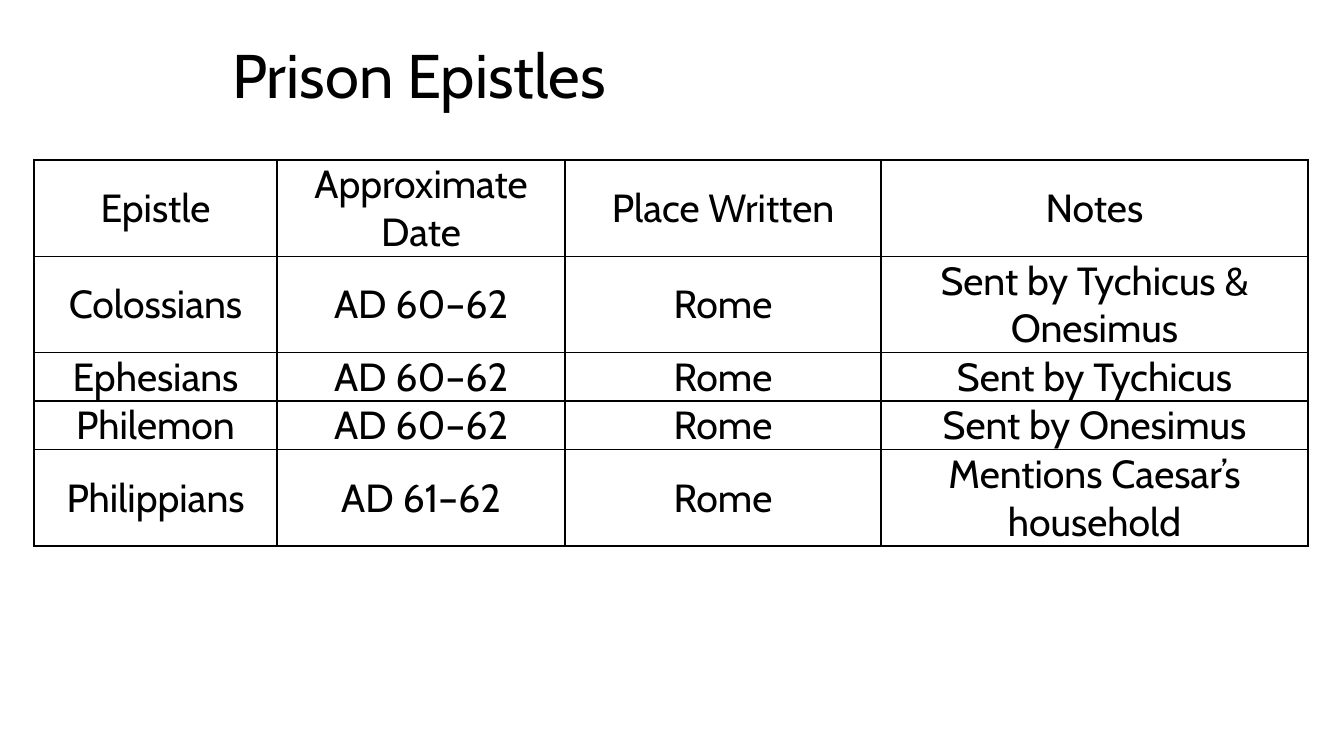
from lxml.etree import SubElement
from pptx import Presentation
from pptx.dml.color import RGBColor
from pptx.enum.text import MSO_ANCHOR, PP_ALIGN
from pptx.oxml.ns import qn
from pptx.util import Emu, Pt

COLORS = {"ink": "000000", "paper": "FFFFFF"}
PX = 914400 / 100.8

COLUMN_WIDTHS = [243, 288, 316, 427]
LINE_HEIGHT = 48
LINES_PER_ROW = [2, 2, 1, 1, 2]
EPISTLES = [
    ["Epistle", "Approximate Date", "Place Written", "Notes"],
    ["Colossians", "AD 60–62", "Rome", "Sent by Tychicus & Onesimus"],
    ["Ephesians", "AD 60–62", "Rome", "Sent by Tychicus"],
    ["Philemon", "AD 60–62", "Rome", "Sent by Onesimus"],
    ["Philippians", "AD 61–62", "Rome", "Mentions Caesar’s household"],
]


def px(length):
    return Emu(round(length * PX))


class SlideBuilder:
    font_name = "Cabin"
    title_size = 44
    table_size = 28
    inner_border = 1
    outer_border = 1.5

    def __init__(self, presentation):
        self.slide = presentation.slides.add_slide(presentation.slide_layouts[5])
        background = self.slide.background.fill
        background.solid()
        background.fore_color.rgb = RGBColor.from_string(COLORS["paper"])

    def style(self, paragraph, size, alignment):
        paragraph.alignment = alignment
        paragraph.font.name = self.font_name
        paragraph.font.size = Pt(size)
        paragraph.font.bold = False
        paragraph.font.color.rgb = RGBColor.from_string(COLORS["ink"])

    def title(self, text, left, top, width, height):
        title = self.slide.shapes.title
        title.left, title.top = px(left), px(top)
        title.width, title.height = px(width), px(height)
        title.text_frame.text = text
        title.text_frame.word_wrap = True
        title.text_frame.vertical_anchor = MSO_ANCHOR.MIDDLE
        paragraph = title.text_frame.paragraphs[0]
        paragraph.line_spacing = 0.9
        self.style(paragraph, self.title_size, PP_ALIGN.LEFT)

    def border(self, cell, side, width):
        line = SubElement(cell._tc.get_or_add_tcPr(), qn(f"a:ln{side}"), w=str(Pt(width)))
        fill = SubElement(line, qn("a:solidFill"))
        SubElement(fill, qn("a:srgbClr"), val=COLORS["ink"])

    def cell(self, cell, text, outer_sides):
        for side in "LRTB":
            self.border(cell, side, self.outer_border if side in outer_sides else self.inner_border)
        cell.fill.background()
        cell.text = text
        cell.vertical_anchor = MSO_ANCHOR.MIDDLE
        cell.margin_left = cell.margin_right = cell.margin_top = px(1)
        cell.margin_bottom = 0
        self.style(cell.text_frame.paragraphs[0], self.table_size, PP_ALIGN.CENTER)

    def table(self, rows, left, top, widths, heights):
        frame = self.slide.shapes.add_table(
            len(rows), len(widths), px(left), px(top), px(sum(widths)), px(sum(heights)))
        table = frame.table
        table.first_row = table.horz_banding = False
        for column, width in zip(table.columns, widths):
            column.width = px(width)
        for row, height in zip(table.rows, heights):
            row.height = px(height)
        last_row, last_column = len(rows) - 1, len(widths) - 1
        for row_index, row in enumerate(rows):
            for column_index, text in enumerate(row):
                edges = {"L": column_index == 0, "R": column_index == last_column,
                         "T": row_index == 0, "B": row_index == last_row}
                outer_sides = [side for side, is_outer in edges.items() if is_outer]
                self.cell(table.cell(row_index, column_index), text, outer_sides)


def main():
    presentation = Presentation()
    presentation.slide_width, presentation.slide_height = px(1344), px(756)
    builder = SlideBuilder(presentation)
    builder.title("Prison Epistles", 222, 30, 436, 98)
    heights = [lines * LINE_HEIGHT for lines in LINES_PER_ROW]
    builder.table(EPISTLES, 34, 160, COLUMN_WIDTHS, heights)
    presentation.save("out.pptx")


if __name__ == "__main__":
    main()
